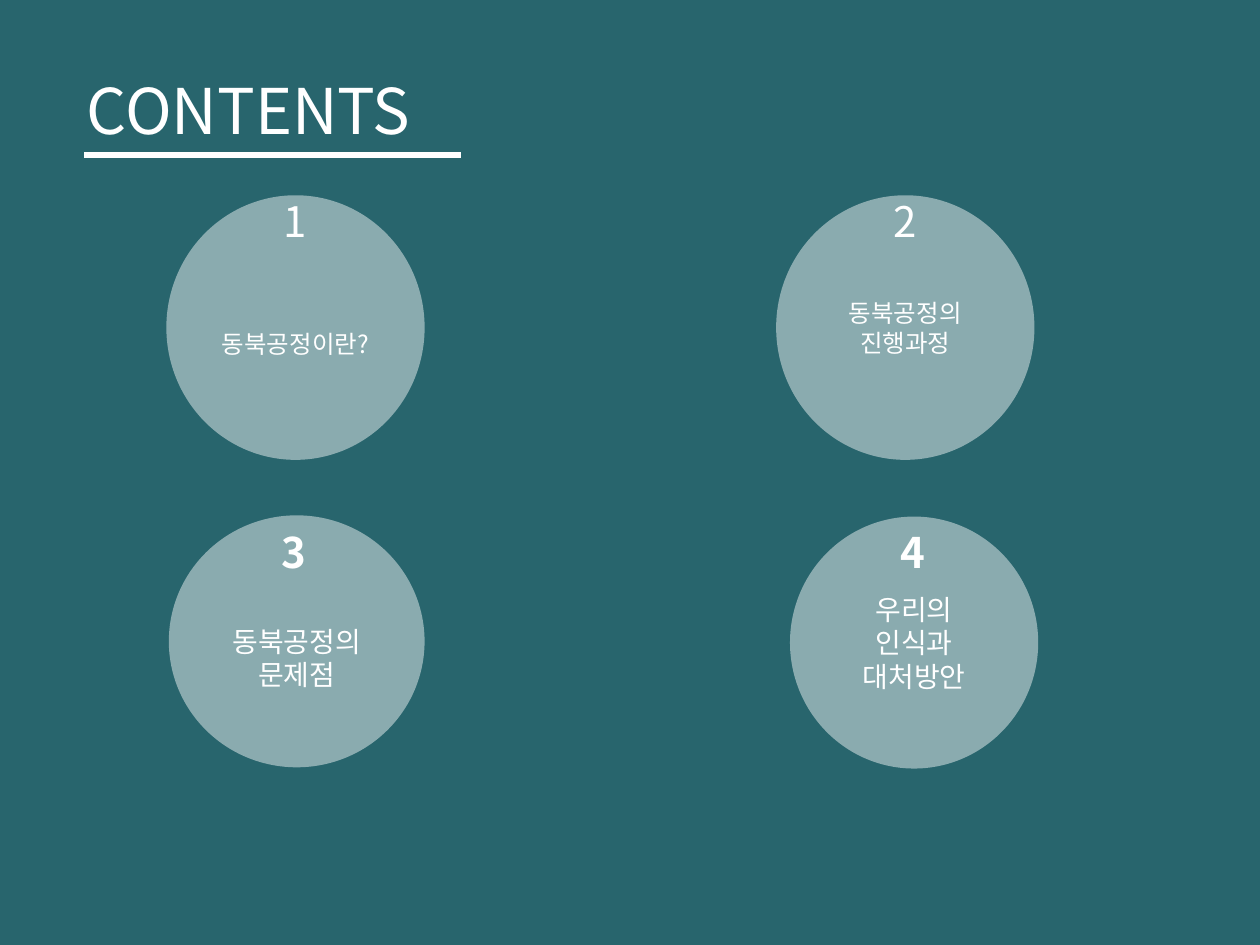
from dataclasses import dataclass

from lxml.etree import SubElement
from pptx import Presentation
from pptx.dml.color import RGBColor
from pptx.enum.shapes import MSO_CONNECTOR, MSO_SHAPE
from pptx.enum.text import MSO_ANCHOR, PP_ALIGN
from pptx.oxml.ns import qn
from pptx.util import Inches, Pt


@dataclass(frozen=True)
class Theme:
    font: str = "Noto Sans CJK KR"
    background: RGBColor = RGBColor(0x28, 0x65, 0x6D)
    white: RGBColor = RGBColor(0xFF, 0xFF, 0xFF)
    circle_alpha: int = 46000
    title_size: int = 36
    number_size: int = 24


theme = Theme()


def write(shape, text, size, align=PP_ALIGN.CENTER, anchor=MSO_ANCHOR.TOP, bold=False):
    frame = shape.text_frame
    frame.word_wrap = True
    frame.vertical_anchor = anchor
    para = frame.paragraphs[0]
    para.text = text
    para.alignment = align
    para.font.size = Pt(size)
    para.font.bold = bold
    para.font.color.rgb = theme.white
    para.font.name = theme.font
    # Hangul takes its typeface from the East Asian font slot
    for span in para.runs:
        span.font.name = theme.font
        SubElement(span.font._element, qn("a:ea"), typeface=theme.font)


# Page
deck = Presentation()
deck.slide_width, deck.slide_height = Inches(10), Inches(7.5)
page = deck.slides.add_slide(deck.slide_layouts[5])
page.background.fill.solid()
page.background.fill.fore_color.rgb = theme.background

# Title and underline
title = page.shapes.title
title.left, title.top = Inches(0.59), Inches(0.52)
title.width, title.height = Inches(3.39), Inches(0.71)
write(title, "CONTENTS", theme.title_size, align=PP_ALIGN.LEFT)

underline = page.shapes.add_connector(
    MSO_CONNECTOR.STRAIGHT, Inches(0.67), Inches(1.23), Inches(3.66), Inches(1.23))
underline.line.color.rgb = theme.white
underline.line.width = Pt(3)
SubElement(underline._element.spPr, qn("a:effectLst"))

# Topics: label, label size, circle box, top inset, number position, bold number
topics = [
    ("동북공정이란?", 14, (1.32, 1.55, 2.05, 2.1), 0.31, (2, 1.5), False),
    ("동북공정의 진행과정", 14, (6.16, 1.55, 2.05, 2.1), 0.05, (6.84, 1.5), False),
    ("동북공정의 문제점", 16, (1.34, 4.09, 2.03, 2), 0.31, (1.99, 4.13), True),
    ("우리의 인식과 대처방안", 16, (6.27, 4.1, 1.97, 2), 0.05, (6.9, 4.13), True),
]
for number, (label, size, box, inset, position, bold) in enumerate(topics, start=1):
    circle = page.shapes.add_shape(MSO_SHAPE.OVAL, *map(Inches, box))
    circle.shadow.inherit = False
    circle.line.fill.background()
    circle.fill.solid()
    circle.fill.fore_color.rgb = theme.white
    color = circle._element.spPr.find(".//" + qn("a:srgbClr"))
    SubElement(color, qn("a:alpha"), val=str(theme.circle_alpha))
    circle.text_frame.margin_top = Inches(inset)
    write(circle, label, size, anchor=MSO_ANCHOR.MIDDLE)

    number_box = page.shapes.add_textbox(*map(Inches, position), Inches(0.69), Inches(0.49))
    write(number_box, str(number), theme.number_size, bold=bold)

deck.save("out.pptx")
